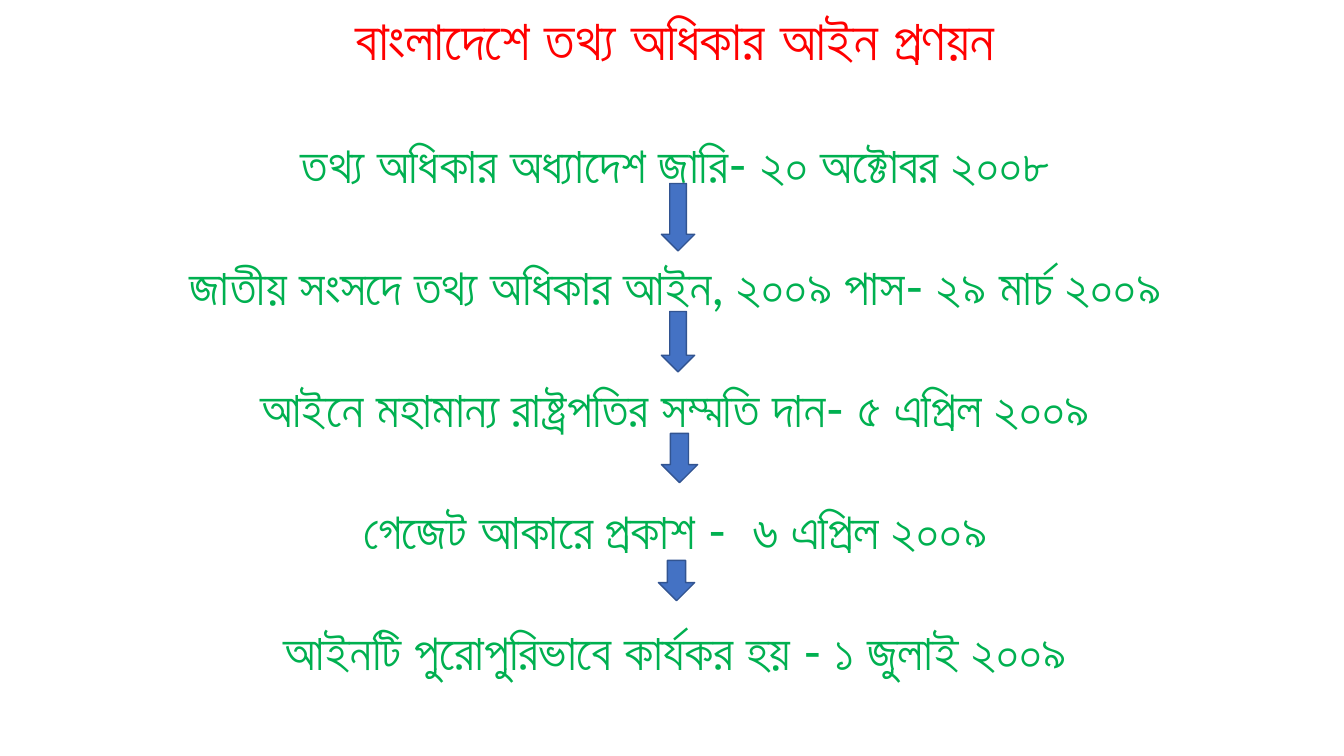
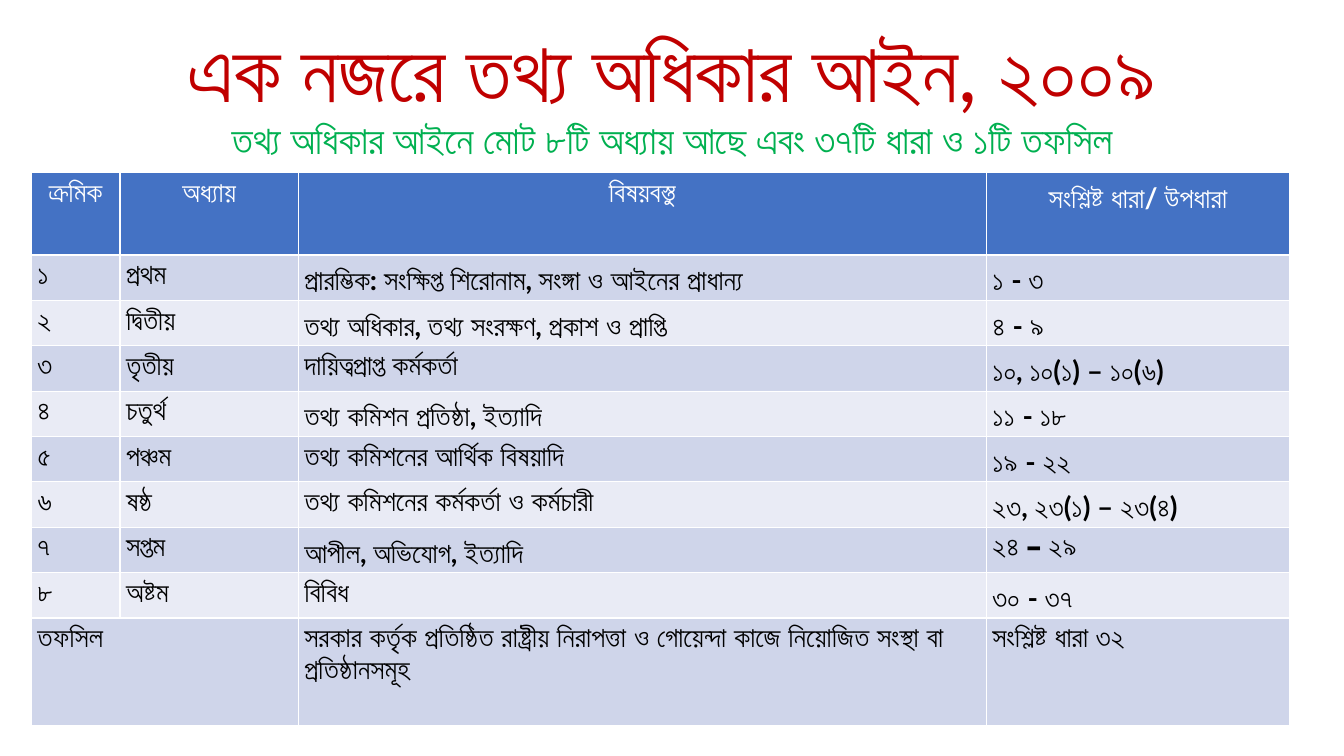
from pptx import Presentation
from pptx.dml.color import RGBColor
from pptx.enum.shapes import MSO_SHAPE as SHAPE
from pptx.enum.text import PP_ALIGN as ALIGN
from pptx.util import Inches, Pt

FONT = "Lato"
RED = RGBColor(0xFF, 0x00, 0x00)
DARK_RED = RGBColor(0xC0, 0x00, 0x00)
GREEN = RGBColor(0x00, 0xB0, 0x50)
BLUE = RGBColor(0x44, 0x72, 0xC4)
NAVY = RGBColor(0x32, 0x54, 0x91)
WHITE = RGBColor(0xFF, 0xFF, 0xFF)
BLACK = RGBColor(0x00, 0x00, 0x00)
BANDS = (RGBColor(0xCF, 0xD5, 0xEA), RGBColor(0xE9, 0xEB, 0xF5))

SLIDE_W, SLIDE_H = Inches(13.33), Inches(7.5)

LAW_TITLE = "বাংলাদেশে তথ্য অধিকার আইন প্রণয়ন"
STEPS = (
    "তথ্য অধিকার অধ্যাদেশ জারি- ২০ অক্টোবর ২০০৮",
    "জাতীয় সংসদে তথ্য অধিকার আইন, ২০০৯ পাস- ২৯ মার্চ ২০০৯",
    "আইনে মহামান্য রাষ্ট্রপতির সম্মতি দান- ৫ এপ্রিল ২০০৯",
    "গেজেট আকারে প্রকাশ -  ৬ এপ্রিল ২০০৯",
    "আইনটি পুরোপুরিভাবে কার্যকর হয় - ১ জুলাই ২০০৯",
)
ARROWS = (
    (49.21, 24.27, 2.48, 8.93),
    (49.21, 41.2, 2.48, 8),
    (49.21, 57.33, 2.7, 6.53),
    (48.99, 74.13, 2.7, 5.33),
)

GLANCE_TITLE = "এক নজরে তথ্য অধিকার আইন, ২০০৯"
GLANCE_SUBTITLE = "তথ্য অধিকার আইনে মোট ৮টি অধ্যায় আছে এবং ৩৭টি ধারা ও ১টি তফসিল"
CHAPTERS = (
    ("ক্রমিক", "অধ্যায়", "বিষয়বস্তু", "সংশ্লিষ্ট ধারা/ উপধারা"),
    ("১", "প্রথম", "প্রারম্ভিক: সংক্ষিপ্ত শিরোনাম, সংঙ্গা ও আইনের প্রাধান্য", "১ - ৩"),
    ("২", "দ্বিতীয়", "তথ্য অধিকার, তথ্য সংরক্ষণ, প্রকাশ ও প্রাপ্তি", "৪ - ৯"),
    ("৩", "তৃতীয়", "দায়িত্বপ্রাপ্ত কর্মকর্তা", "১০, ১০(১) – ১০(৬)"),
    ("৪", "চতুর্থ", "তথ্য কমিশন প্রতিষ্ঠা, ইত্যাদি", "১১ - ১৮"),
    ("৫", "পঞ্চম", "তথ্য কমিশনের আর্থিক বিষয়াদি", "১৯ - ২২"),
    ("৬", "ষষ্ঠ", "তথ্য কমিশনের কর্মকর্তা ও কর্মচারী", "২৩, ২৩(১) – ২৩(৪)"),
    ("৭", "সপ্তম", "আপীল, অভিযোগ, ইত্যাদি", "২৪ – ২৯"),
    ("৮", "অষ্টম", "বিবিধ", "৩০ - ৩৭"),
    ("তফসিল", "",
     "সরকার কর্তৃক প্রতিষ্ঠিত রাষ্ট্রীয় নিরাপত্তা ও গোয়েন্দা কাজে নিয়োজিত সংস্থা বা প্রতিষ্ঠানসমূহ",
     "সংশ্লিষ্ট ধারা ৩২"),
)
COL_SHARES = (7.05, 14.17, 54.68, 24.1)
ROW_SHARES = (14.95,) + (8.2,) * 8 + (19.45,)


def frame(x, y, w, h):
    """Turn percentages of the slide into a left, top, width, height box."""
    return (round(SLIDE_W * x / 100), round(SLIDE_H * y / 100),
            round(SLIDE_W * w / 100), round(SLIDE_H * h / 100))


def add_text(p, text, size, color, bold=False, align=ALIGN.CENTER):
    """Add one styled run to an aligned paragraph."""
    p.alignment = align
    r = p.add_run()
    r.text = text
    r.font.name, r.font.size, r.font.bold = FONT, Pt(size), bold
    r.font.color.rgb = color


def add_box(s, box):
    """Add a wrapping text box and return its text frame."""
    tf = s.shapes.add_textbox(*box).text_frame
    tf.word_wrap = True
    return tf


def add_timeline(s, box):
    """Write the title and the evenly spaced steps of the law."""
    tf = add_box(s, box)
    add_text(tf.paragraphs[0], LAW_TITLE, 40, RED, bold=True)
    for step in STEPS:
        p = tf.add_paragraph()
        p.line_spacing, p.space_before = Pt(43), Pt(44)
        add_text(p, step, 36, GREEN)


def add_arrow(s, box):
    """Draw one down arrow between two steps."""
    sp = s.shapes.add_shape(SHAPE.DOWN_ARROW, *box)
    sp.shadow.inherit = False
    sp.fill.solid()
    sp.fill.fore_color.rgb = BLUE
    sp.line.color.rgb = NAVY
    sp.line.width = Pt(1)


def add_heading(s, box):
    """Write the large title with its subtitle."""
    tf = add_box(s, box)
    lines = ((GLANCE_TITLE, 59.4, DARK_RED), (GLANCE_SUBTITLE, 27.9, GREEN))
    for i, (text, size, color) in enumerate(lines):
        p = tf.add_paragraph() if i else tf.paragraphs[0]
        p.line_spacing = 0.9
        add_text(p, text, size, color)


def fill_cell(cell, text, row):
    """Colour a cell by its row and write its text."""
    header = row == 0
    cell.fill.solid()
    cell.fill.fore_color.rgb = BLUE if header else BANDS[(row - 1) % 2]
    cell.margin_left = cell.margin_right = Inches(0.06)
    cell.margin_top = cell.margin_bottom = Inches(0.03)
    if text:
        p = cell.text_frame.paragraphs[0]
        p.line_spacing = 1.15
        add_text(p, text, 20, WHITE if header else BLACK, bold=True,
                 align=ALIGN.CENTER if header else ALIGN.LEFT)


def add_chapters(s, box):
    """Build the chapter table with proportional columns and rows."""
    width, height = box[2:]
    table = s.shapes.add_table(len(CHAPTERS), len(COL_SHARES), *box).table
    for col, share in zip(table.columns, COL_SHARES):
        col.width = round(width * share / 100)
    for row, share in zip(table.rows, ROW_SHARES):
        row.height = round(height * share / 100)
    for i, texts in enumerate(CHAPTERS):
        for j, text in enumerate(texts):
            fill_cell(table.cell(i, j), text, i)
    last = len(CHAPTERS) - 1
    table.cell(last, 0).merge(table.cell(last, 1))


def build_timeline_slide(s):
    """Lay out the steps with arrows between them."""
    add_timeline(s, frame(0.5, 0, 99.5, 100))
    for arrow in ARROWS:
        add_arrow(s, frame(*arrow))


def build_glance_slide(s):
    """Lay out the heading above the chapter table."""
    add_heading(s, frame(6.9, 3.4, 86.2, 19))
    add_chapters(s, frame(2.33, 22.8, 93.62, 73.2))


def main():
    """Build and save the presentation."""
    prs = Presentation()
    prs.slide_width, prs.slide_height = SLIDE_W, SLIDE_H
    for build in (build_timeline_slide, build_glance_slide):
        build(prs.slides.add_slide(prs.slide_layouts[6]))
    prs.save("out.pptx")


if __name__ == "__main__":
    main()
